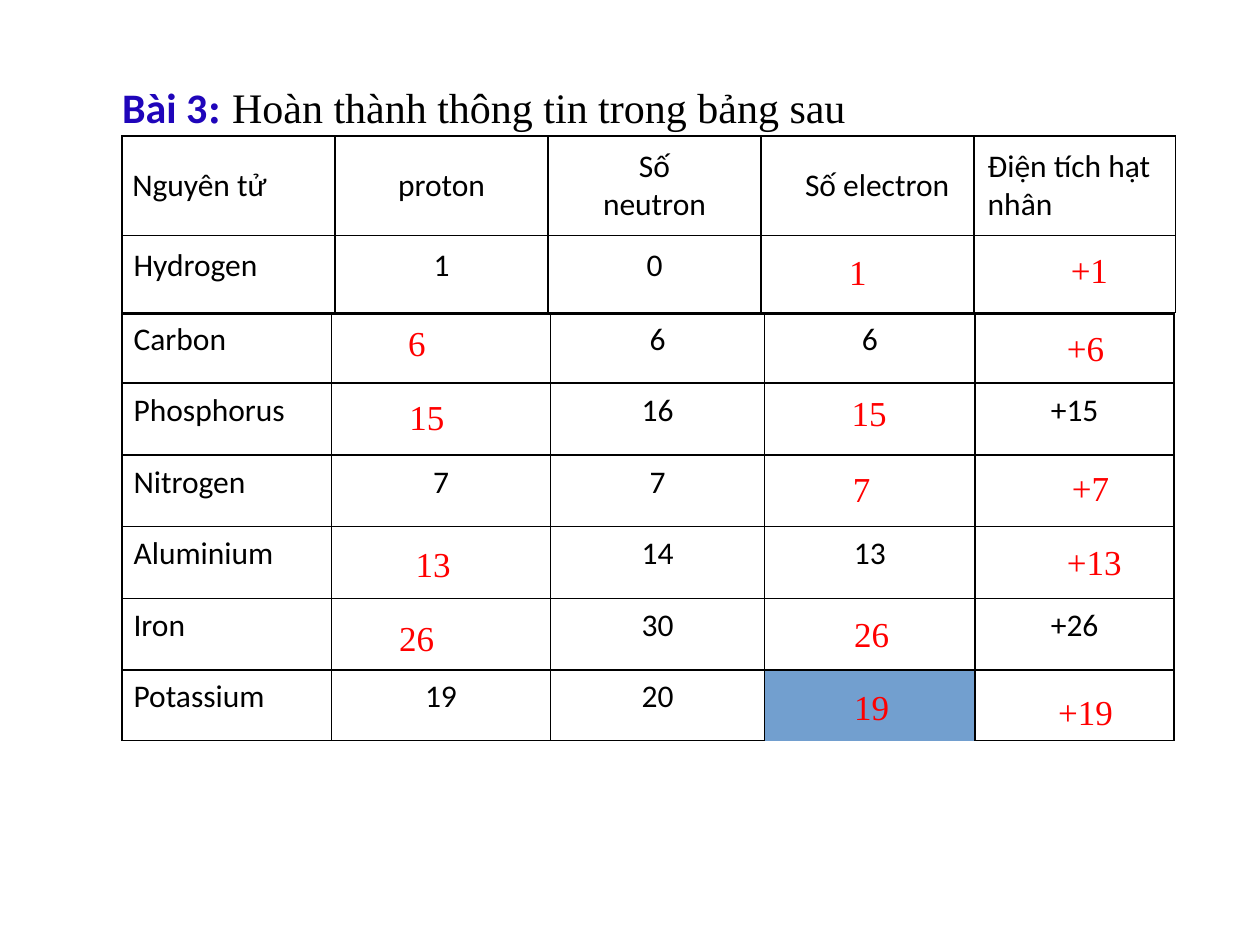
from itertools import product

from lxml import etree
from pptx import Presentation
from pptx.dml.color import RGBColor
from pptx.enum.text import MSO_ANCHOR, MSO_AUTO_SIZE, PP_ALIGN
from pptx.oxml.ns import qn
from pptx.util import Inches, Pt

MIDDLE, CENTER, LEFT = MSO_ANCHOR.MIDDLE, PP_ALIGN.CENTER, PP_ALIGN.LEFT
FIT = MSO_AUTO_SIZE.SHAPE_TO_FIT_TEXT

COLORS = {"ink": "000000", "heading": "1F05BA", "answer": "FF0000", "shade": "729FCF"}
SANS, SERIF = "Calibri", "Times New Roman"

TITLE_RUNS = [
    ("Bài 3", SANS, "heading", True),
    (": ", SERIF, "heading", True),
    ("Hoàn thành thông tin trong bảng sau", SERIF, "ink", False),
]

TABLE_LEFT = 0.97
# Each table: rows of text, row line spacing in points (None is single)
HEAD = {
    "top": 1.08,
    "cols": [1.69, 1.69, 1.69, 1.69, 1.6],
    "heights": [0.79, 0.61],
    "spacing": [None, 12.6],
    "rows": [
        ["Nguyên tử", "proton", "Số neutron", "Số electron", "Điện tích hạt nhân"],
        ["Hydrogen", "1", "0", "", ""],
    ],
}
ELEMENTS = {
    "top": 2.49,
    "cols": [1.66, 1.74, 1.59, 0.11, 1.67, 1.58],
    "heights": [0.55, 0.57, 0.57, 0.57, 0.57, 0.56],
    "spacing": [11.8] + [12.3] * 5,
    "rows": [
        ["Carbon", "", "6", "", "6", ""],
        ["Phosphorus", "", "16", "", "", "+15"],
        ["Nitrogen", "7", "7", "", "", ""],
        ["Aluminium", "", "14", "", "13", ""],
        ["Iron", "", "30", "", "", "+26"],
        ["Potassium", "19", "20", "", "", ""],
    ],
}
NEUTRON_COL, ELECTRON_COL = 2, 4
# Left and right indents of the header row
HEAD_INDENTS = [(0.08, 0), (0.34, 0.34), (0.34, 0.34), (0.35, 0), (0.11, 0)]

# Filled-in answers: text, left, top
ANSWERS = [
    ("1", 6.64, 1.94), ("+1", 8.4, 1.92),
    ("6", 3.14, 2.5), ("+6", 8.37, 2.54),
    ("15", 3.15, 3.09), ("15", 6.66, 3.06),
    ("7", 6.67, 3.66), ("+7", 8.41, 3.65),
    ("13", 3.2, 4.26), ("+13", 8.37, 4.24),
    ("26", 3.07, 4.84), ("26", 6.68, 4.81),
    ("19", 6.68, 5.39), ("+19", 8.3, 5.43),
]


def add_run(paragraph, text, size, font, color, bold=False):
    run = paragraph.add_run()
    run.text = text
    run.font.size, run.font.name, run.font.bold = Pt(size), font, bold
    run.font.color.rgb = RGBColor.from_string(COLORS[color])


def set_borders(cell, hidden=()):
    """Draw the four sides at 1 pt, leaving out the hidden ones."""
    props = cell._tc.get_or_add_tcPr()
    for place, side in enumerate(("lnL", "lnR", "lnT", "lnB")):
        line = etree.Element(qn(f"a:{side}"), w=str(Pt(1)))
        props.insert(place, line)
        if side in hidden:
            etree.SubElement(line, qn("a:noFill"))
        else:
            fill = etree.SubElement(line, qn("a:solidFill"))
            etree.SubElement(fill, qn("a:srgbClr"), val=COLORS["ink"])


def write_cell(cell, text, align, indents, spacing):
    cell.margin_left = cell.margin_right = cell.margin_top = cell.margin_bottom = 0
    cell.vertical_anchor = MIDDLE
    cell.fill.background()
    paragraph = cell.text_frame.paragraphs[0]
    paragraph.font.size = Pt(18)
    if text:
        paragraph.alignment = align
        if spacing:
            paragraph.line_spacing = Pt(spacing)
        for name, indent in zip(("marL", "marR"), indents):
            paragraph._p.get_or_add_pPr().set(name, str(Inches(indent)))
        add_run(paragraph, text, 18, SANS, "ink")


def add_grid(slide, data):
    rows, cols, heights = data["rows"], data["cols"], data["heights"]
    table = slide.shapes.add_table(
        len(rows), len(cols), Inches(TABLE_LEFT), Inches(data["top"]),
        Inches(sum(cols)), Inches(sum(heights))).table
    table.first_row = table.horz_banding = False
    for column, width in zip(table.columns, cols):
        column.width = Inches(width)
    for row, height in zip(table.rows, heights):
        row.height = Inches(height)
    for r, c in product(range(len(rows)), range(len(cols))):
        spacing = data["spacing"][r]
        indents = (0.09 if c == 0 else 0, 0) if spacing else HEAD_INDENTS[c]
        align = CENTER if c and (spacing or indents[1]) else LEFT
        write_cell(table.cell(r, c), rows[r][c], align, indents, spacing)
    return table


def add_text_box(slide, left, top, width, height):
    frame = slide.shapes.add_textbox(
        Inches(left), Inches(top), Inches(width), Inches(height)).text_frame
    frame.word_wrap = False
    frame.auto_size = FIT
    return frame


def add_title(slide):
    frame = add_text_box(slide, 0.28, 0.41, 6.76, 1.03)
    frame.vertical_anchor = MIDDLE
    frame.margin_left, frame.margin_right = Inches(0.69), Inches(0.29)
    frame.margin_top, frame.margin_bottom = Inches(0.24), Inches(0.39)
    for text, font, color, bold in TITLE_RUNS:
        add_run(frame.paragraphs[0], text, 24, font, color, bold)


def add_answer(slide, text, left, top):
    signs = text.count("+")
    width = 0.2 + 0.14 * (len(text) - signs) + 0.16 * signs
    frame = add_text_box(slide, left, top, width, 0.44)
    add_run(frame.paragraphs[0], text, 20, SERIF, "answer")


def main():
    deck = Presentation()
    deck.slide_width, deck.slide_height = Inches(10), Inches(7.5)
    slide = deck.slides.add_slide(deck.slide_layouts[6])

    head = add_grid(slide, HEAD)
    add_title(slide)
    elements = add_grid(slide, ELEMENTS)

    last_row = len(ELEMENTS["rows"]) - 1
    for r in range(last_row + 1):
        elements.cell(r, NEUTRON_COL).merge(elements.cell(r, NEUTRON_COL + 1))
    shaded = elements.cell(last_row, ELECTRON_COL)
    shaded.fill.solid()
    shaded.fill.fore_color.rgb = RGBColor.from_string(COLORS["shade"])

    for table in (head, elements):
        for cell in table.iter_cells():
            set_borders(cell, ("lnB",) if cell == shaded else ())
    for answer in ANSWERS:
        add_answer(slide, *answer)
    deck.save("out.pptx")


if __name__ == "__main__":
    main()
